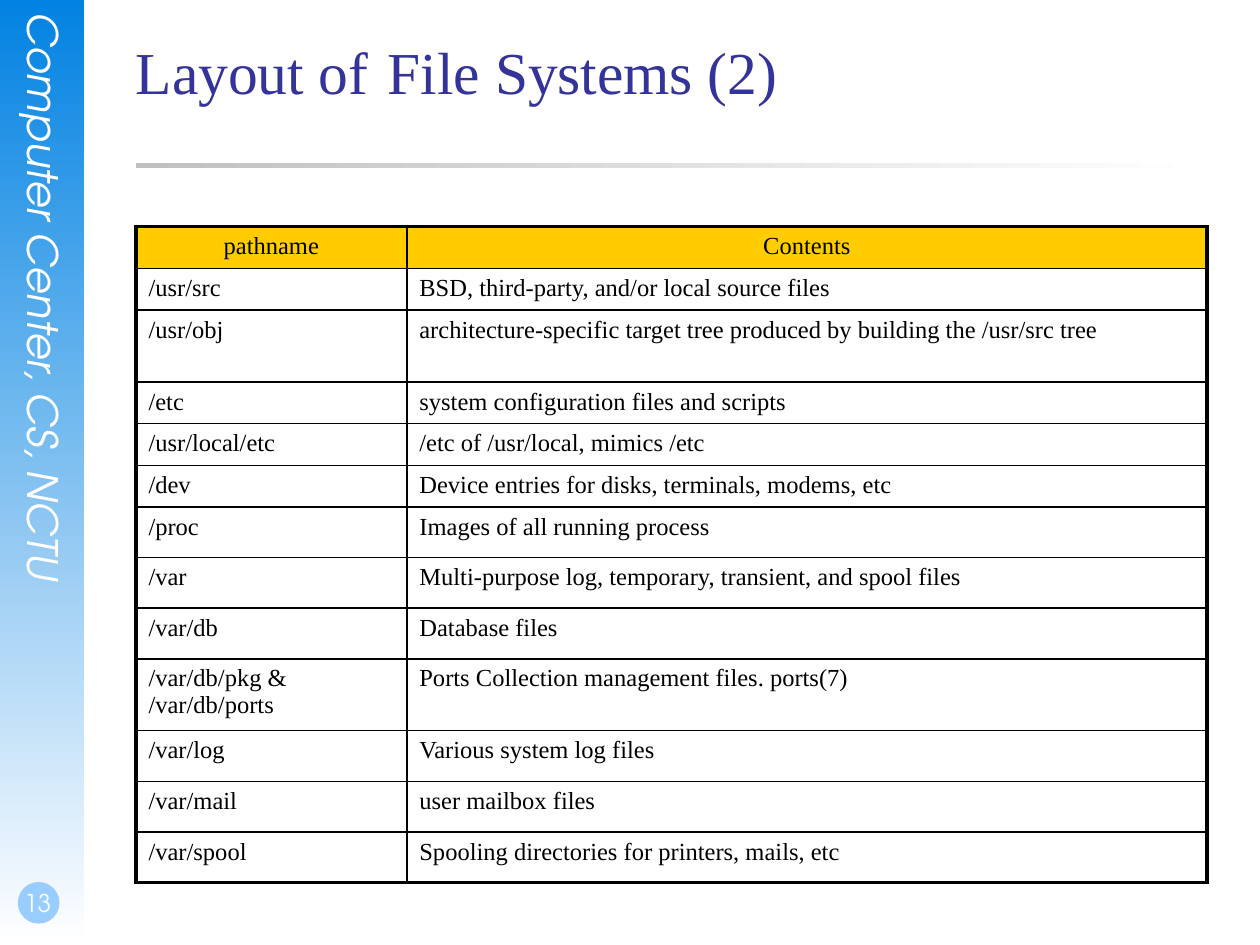
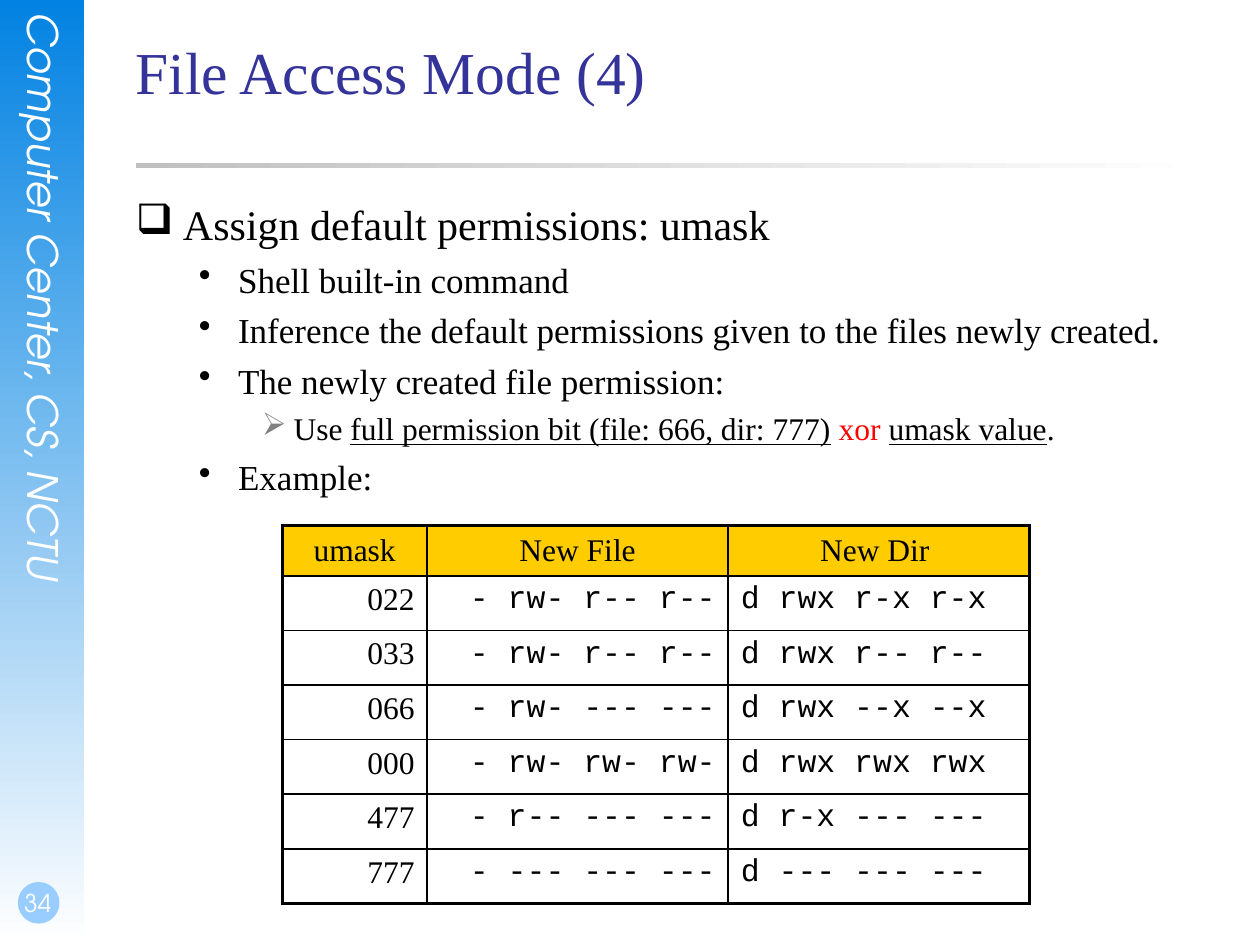
from dataclasses import dataclass
from typing import Any, NamedTuple

from lxml import etree
from pptx import Presentation, util as u
from pptx.dml.color import RGBColor
from pptx.enum import shapes, text
from pptx.oxml.ns import qn


# Theme: colours, fonts and type sizes
@dataclass(frozen=True)
class Theme:
    sky: str = "0282E2"
    pale: str = "99CCFF"
    white: str = "FFFFFF"
    black: str = "000000"
    navy: str = "333399"
    gold: str = "FFCC00"
    red: str = "FF0000"
    silver: str = "C0C0C0"
    gray: str = "808080"
    serif: str = "Times New Roman"
    mono: str = "Courier New"
    brand: str = "TeX Gyre Adventor"
    title: int = 34
    side: int = 24
    small: int = 14
    cell: int = 18
    thick: float = 2.25
    thin: float = 1


T = Theme()
LEFT, CENTER, RIGHT = text.PP_ALIGN.LEFT, text.PP_ALIGN.CENTER, text.PP_ALIGN.RIGHT


class Box(NamedTuple):
    left: float
    top: float
    width: float
    height: float

    def cm(self) -> list[u.Cm]:
        return [u.Cm(side) for side in self]


# Column and grid describe a table; lengths in centimetres
class Column(NamedTuple):
    width: float
    align: Any = LEFT
    font: str = T.serif


@dataclass(frozen=True)
class Grid:
    left: float
    top: float
    cols: list[Column]
    heights: list[float]
    rows: list[tuple[str, ...]]
    size: int
    anchor: Any = text.MSO_ANCHOR.TOP


# Level describes one step of the bullet list
class Level(NamedTuple):
    mark: str
    size: int
    indent: float
    hang: float
    tint: str = T.black


LEVELS = [
    Level("❑", 24, 0.95, 0.95),
    Level("•", 20, 2.06, 0.79),
    Level("➢", 18, 3.18, 0.64, T.gray),
]
CONTENT = Box(2.74, 4.01, 21.59, 12.9)


# Text helpers
def write(para: Any, words: str, *, size: float, font: str = T.serif,
          color: str = T.black, italic: bool = False, under: bool = False,
          align: Any = LEFT) -> None:
    para.alignment = align
    run = para.add_run()
    run.text = words
    face = run.font
    face.name, face.size = font, u.Pt(size)
    face.italic, face.underline = italic, under
    face.color.rgb = RGBColor.from_string(color)


def node(parent: Any, tag: str, **attrs: str) -> Any:
    return etree.SubElement(parent, qn(f"a:{tag}"), attrs)


def space(para: Any) -> Any:
    """Put a quarter line of space before the paragraph."""
    props = para._p.get_or_add_pPr()
    node(node(props, "spcBef"), "spcPct", val="25000")
    return props


def bullet(para: Any, level: Level) -> None:
    props = space(para)
    props.set("marL", str(u.Cm(level.indent)))
    props.set("indent", str(-u.Cm(level.hang)))
    node(node(props, "buClr"), "srgbClr", val=level.tint)
    node(props, "buChar", char=level.mark)


def frame(shape: Any, pads: tuple[float, ...] = (0, 0, 0, 0),
          anchor: Any = text.MSO_ANCHOR.TOP) -> Any:
    body = shape.text_frame
    body.word_wrap = True
    body.auto_size = text.MSO_AUTO_SIZE.NONE
    body.vertical_anchor = anchor
    (body.margin_left, body.margin_top,
     body.margin_right, body.margin_bottom) = map(u.Cm, pads)
    return body


# Shared parts of every slide
def shape(slide: Any, kind: Any, box: Box, *colors: str, angle: float = 0) -> None:
    item = slide.shapes.add_shape(kind, *box.cm())
    item.shadow.inherit = False
    item.line.fill.background()
    if len(colors) == 1:
        item.fill.solid()
        item.fill.fore_color.rgb = RGBColor.from_string(colors[0])
        return
    item.fill.gradient()
    item.fill.gradient_angle = angle
    for stop, color in zip(item.fill.gradient_stops, colors):
        stop.color.rgb = RGBColor.from_string(color)


def start(deck: Any, title: str, number: int) -> Any:
    slide = deck.slides.add_slide(deck.slide_layouts[5])
    rect, oval = shapes.MSO_SHAPE.RECTANGLE, shapes.MSO_SHAPE.OVAL

    # Side band with its vertical label
    shape(slide, rect, Box(0, 0, 1.7, 19.05), T.sky, T.white, angle=270)
    label = frame(slide.shapes.add_textbox(*Box(0.38, 0.25, 1.02, 12.98).cm()))
    label._txBody.bodyPr.set("vert", "eaVert")
    write(label.paragraphs[0], "Computer Center, CS, NCTU",
          size=T.side, font=T.brand, color=T.white, italic=True)

    # Page number
    shape(slide, oval, Box(0.36, 17.78, 0.84, 0.84), T.pale)
    page = frame(slide.shapes.add_textbox(*Box(0, 17.35, 1.47, 1.27).cm()),
                 (0.05, 0, 0, 0.13), text.MSO_ANCHOR.BOTTOM)
    write(page.paragraphs[0], str(number),
          size=T.small, font=T.brand, color=T.white, align=CENTER)

    # Title and its rule
    shape(slide, rect, Box(2.74, 3.28, 21.59, 0.1), T.silver, T.white)
    head = slide.shapes.title
    head.left, head.top, head.width, head.height = Box(2.74, 0.71, 21.59, 3.18).cm()
    write(frame(head).paragraphs[0], title, size=T.title, color=T.navy)
    return slide


# Tables
def border(cell: Any, thick: dict[str, bool]) -> None:
    props = cell._tc.get_or_add_tcPr()
    for side, heavy in thick.items():
        width = u.Pt(T.thick if heavy else T.thin)
        line = node(props, f"ln{side}", w=str(width))
        node(node(line, "solidFill"), "srgbClr", val=T.black)


def table(slide: Any, grid: Grid) -> None:
    count, wide = len(grid.rows), len(grid.cols)
    box = Box(grid.left, grid.top, sum(c.width for c in grid.cols), sum(grid.heights))
    tab = slide.shapes.add_table(count, wide, *box.cm()).table
    tab.first_row = tab.horz_banding = False
    for col, spec in zip(tab.columns, grid.cols):
        col.width = u.Cm(spec.width)
    for row, height in zip(tab.rows, grid.heights):
        row.height = u.Cm(height)
    for r, row in enumerate(grid.rows):
        for c, (words, col) in enumerate(zip(row, grid.cols)):
            cell, head = tab.cell(r, c), r == 0
            border(cell, {"L": c == 0, "R": c == wide - 1,
                          "T": head, "B": r == count - 1})
            if head:
                cell.fill.solid()
                cell.fill.fore_color.rgb = RGBColor.from_string(T.gold)
                cell.vertical_anchor = grid.anchor
            else:
                cell.fill.background()
            para = cell.text_frame.paragraphs[0]
            space(para)
            write(para, words, size=grid.size,
                  font=T.serif if head else col.font,
                  align=CENTER if head else col.align)


# Slide content
LOW, MID, TALL = 0.84, 1.02, 1.45
PATHS = Grid(
    2.74, 4.57, [Column(5.46), Column(16.13)],
    [LOW, LOW, TALL] + [LOW] * 3 + [MID] * 3 + [TALL] + [MID] * 3,
    [
        ("pathname", "Contents"),
        ("/usr/src", "BSD, third-party, and/or local source files"),
        ("/usr/obj", "architecture-specific target tree produced by building the /usr/src tree"),
        ("/etc", "system configuration files and scripts"),
        ("/usr/local/etc", "/etc of /usr/local, mimics /etc"),
        ("/dev", "Device entries for disks, terminals, modems, etc"),
        ("/proc", "Images of all running process"),
        ("/var", "Multi-purpose log, temporary, transient, and spool files"),
        ("/var/db", "Database files"),
        ("/var/db/pkg & /var/db/ports", "Ports Collection management files. ports(7)"),
        ("/var/log", "Various system log files"),
        ("/var/mail", "user mailbox files"),
        ("/var/spool", "Spooling directories for printers, mails, etc"),
    ],
    T.small,
)
MASKS = Grid(
    5.69, 10.59,
    [Column(2.92, RIGHT), Column(6.07, RIGHT, T.mono), Column(6.07, LEFT, T.mono)],
    [1.02] + [1.1] * 6,
    [
        ("umask", "New File", "New Dir "),
        ("022", "- rw- r-- r--", "d rwx r-x r-x"),
        ("033", "- rw- r-- r--", "d rwx r-- r--"),
        ("066", "- rw- --- ---", "d rwx --x --x"),
        ("000", "- rw- rw- rw-", "d rwx rwx rwx"),
        ("477", "- r-- --- ---", "d r-x --- ---"),
        ("777", "- --- --- ---", "d --- --- ---"),
    ],
    T.cell,
    text.MSO_ANCHOR.MIDDLE,
)
UNDER = {"under": True}
POINTS: list[tuple[int, list[tuple[str, dict]]]] = [
    (0, [("Assign default permissions: umask", {})]),
    (1, [("Shell built-in command", {})]),
    (1, [("Inference the default permissions given to the files newly created.", {})]),
    (1, [("The newly created file permission:", {})]),
    (2, [("Use ", {}), ("full permission bit (file: 666, dir: 777)", UNDER),
         (" ", {}), ("xor ", {"color": T.red}), ("umask value", UNDER), (".", {})]),
    (1, [("Example:", {})]),
]


def points(slide: Any) -> None:
    body = frame(slide.shapes.add_textbox(*CONTENT.cm()))
    for i, (depth, runs) in enumerate(POINTS):
        para = body.add_paragraph() if i else body.paragraphs[0]
        para.level = depth
        bullet(para, LEVELS[depth])
        for words, style in runs:
            write(para, words, size=LEVELS[depth].size, **style)


def main() -> None:
    deck = Presentation()
    deck.slide_width, deck.slide_height = u.Cm(25.4), u.Cm(19.05)

    table(start(deck, "Layout of \tFile Systems (2)", 13), PATHS)

    modes = start(deck, "File Access Mode (4)", 34)
    points(modes)
    table(modes, MASKS)

    deck.save("out.pptx")


if __name__ == "__main__":
    main()
